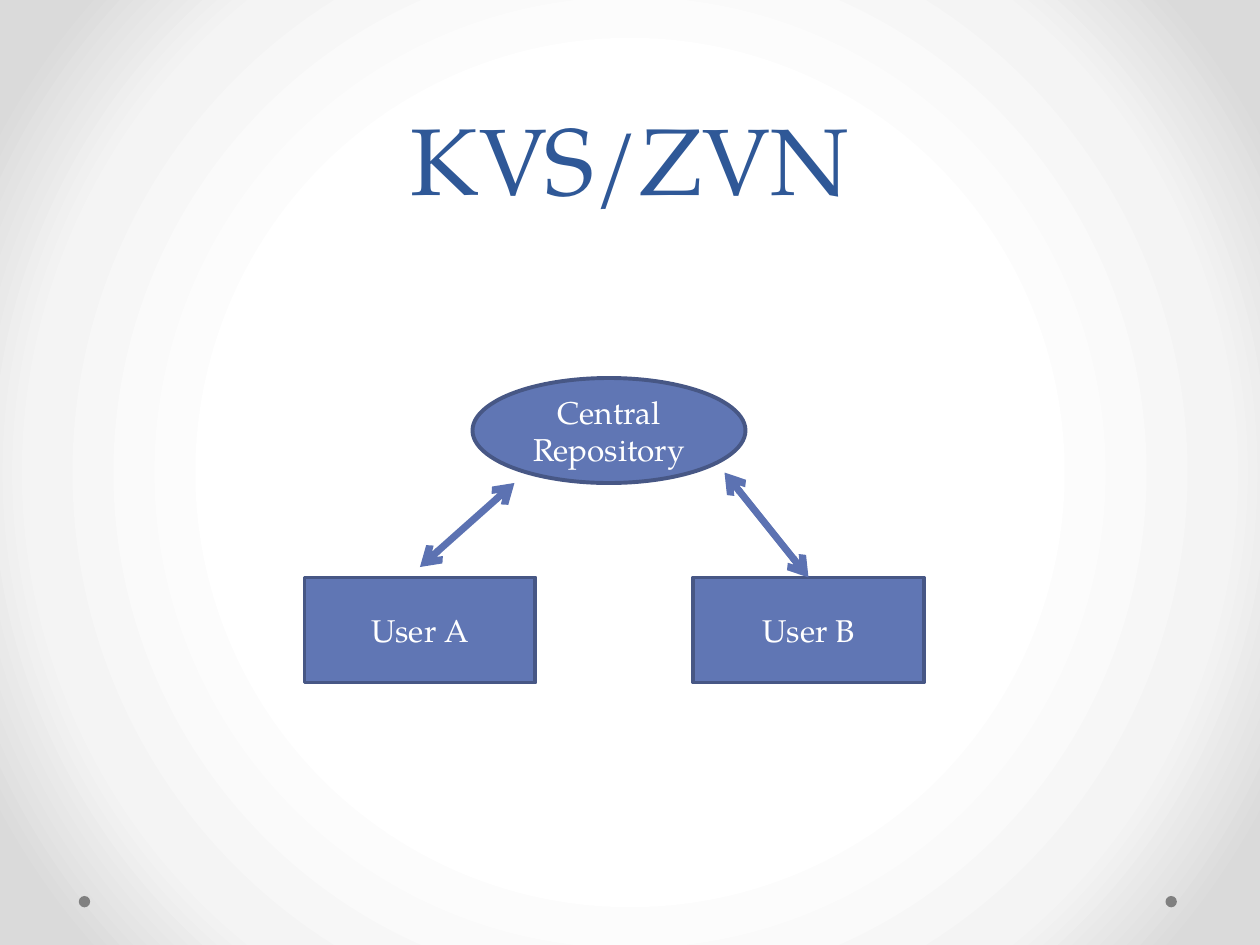
import dataclasses

import pptx
import pptx.dml.color
import pptx.enum.shapes
import pptx.enum.text
import pptx.oxml
import pptx.oxml.ns
import pptx.util

Pt = pptx.util.Pt
SHAPES = pptx.enum.shapes.MSO_SHAPE
FONT = "TeX Gyre Pagella"
COLORS = {
    "title": "2F5897",
    "node": "6076B4",
    "border": "475785",
    "arrow": "5C72B2",
    "text": "FFFFFF",
    "dot": "808080",
}
BACKGROUND_STOPS = {50: "FFFFFF", 76: "F4F4F4", 92: "DADADA"}
NODE_HEIGHT = 60
USER_WIDTH = 132
USER_TOP = 330


@dataclasses.dataclass
class Node:
    label: str
    shape: int
    left: float
    top: float
    width: float


@dataclasses.dataclass
class Arrow:
    start: tuple[float, float]
    end: tuple[float, float]


NODES = [
    Node("Central Repository", SHAPES.OVAL, 270, 216, 156),
    Node("User A", SHAPES.RECTANGLE, 174, USER_TOP, USER_WIDTH),
    Node("User B", SHAPES.RECTANGLE, 396, USER_TOP, USER_WIDTH),
]
ARROWS = [
    Arrow((240, 324), (294, 276)),
    Arrow((462, USER_TOP), (414, 270)),
]


def color(name: str) -> pptx.dml.color.RGBColor:
    return pptx.dml.color.RGBColor.from_string(COLORS[name])


def paint_background(page) -> None:
    page.background.fill.solid()
    solid = page.element.xpath(".//p:bgPr/a:solidFill")[0]
    stops = "".join(
        f'<a:gs pos="{position * 1000}"><a:srgbClr val="{value}"/></a:gs>'
        for position, value in BACKGROUND_STOPS.items()
    )
    gradient = pptx.oxml.parse_xml(
        f'<a:gradFill {pptx.oxml.ns.nsdecls("a")} rotWithShape="1">'
        f"<a:gsLst>{stops}</a:gsLst>"
        '<a:path path="circle">'
        '<a:fillToRect l="50000" t="50000" r="50000" b="50000"/>'
        "</a:path></a:gradFill>"
    )
    solid.getparent().replace(solid, gradient)


def write_text(frame, text: str, size: float, color_name: str):
    frame.word_wrap = True
    para = frame.paragraphs[0]
    para.alignment = pptx.enum.text.PP_ALIGN.CENTER
    run = para.add_run()
    run.text = text
    run.font.name = FONT
    run.font.size = Pt(size)
    run.font.color.rgb = color(color_name)
    return para


def add_title(page, text: str) -> None:
    title = page.shapes.title
    title.left, title.top = Pt(36), Pt(0)
    title.width, title.height = Pt(648), Pt(126)
    frame = title.text_frame
    frame.auto_size = pptx.enum.text.MSO_AUTO_SIZE.NONE
    frame.vertical_anchor = pptx.enum.text.MSO_ANCHOR.BOTTOM
    para = write_text(frame, text, 54, "title")
    para.line_spacing = Pt(58)


def add_dot(page, left: float) -> None:
    size = Pt(6.5)
    dot = page.shapes.add_shape(SHAPES.OVAL, Pt(left), Pt(512), size, size)
    dot.shadow.inherit = False
    dot.fill.solid()
    dot.fill.fore_color.rgb = color("dot")
    dot.line.fill.background()


def add_node(page, node: Node) -> None:
    box = page.shapes.add_shape(
        node.shape, Pt(node.left), Pt(node.top), Pt(node.width), Pt(NODE_HEIGHT)
    )
    box.shadow.inherit = False
    box.fill.solid()
    box.fill.fore_color.rgb = color("node")
    box.line.color.rgb = color("border")
    box.line.width = Pt(2.25)
    box.text_frame.vertical_anchor = pptx.enum.text.MSO_ANCHOR.MIDDLE
    write_text(box.text_frame, node.label, 18, "text")


def add_arrow(page, arrow: Arrow) -> None:
    connector = page.shapes.add_connector(
        pptx.enum.shapes.MSO_CONNECTOR.STRAIGHT,
        *(Pt(length) for length in arrow.start + arrow.end),
    )
    connector.line.color.rgb = color("arrow")
    connector.line.width = Pt(4)
    namespace = pptx.oxml.ns.nsdecls("a")
    properties = connector.element.spPr
    outline = properties.find(pptx.oxml.ns.qn("a:ln"))
    for end in ("headEnd", "tailEnd"):
        outline.append(pptx.oxml.parse_xml(f'<a:{end} {namespace} type="arrow"/>'))
    properties.append(pptx.oxml.parse_xml(f"<a:effectLst {namespace}/>"))


def main() -> None:
    deck = pptx.Presentation()
    deck.slide_width, deck.slide_height = Pt(720), Pt(540)
    page = deck.slides.add_slide(deck.slide_layouts[5])
    paint_background(page)
    for left in (666, 45):
        add_dot(page, left)
    add_title(page, "KVS/ZVN")
    for node in NODES:
        add_node(page, node)
    for arrow in ARROWS:
        add_arrow(page, arrow)
    deck.save("out.pptx")


if __name__ == "__main__":
    main()
